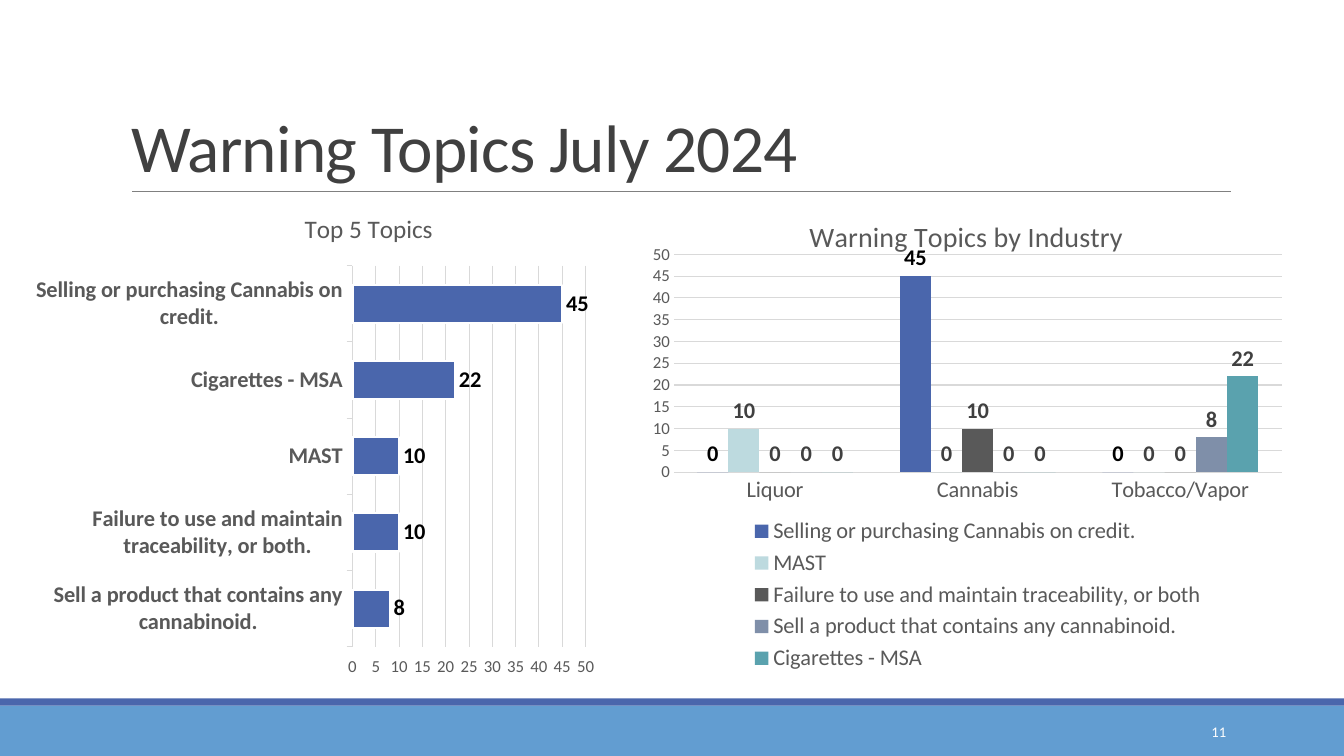
"""Build the July 2024 warning topics slide with two bar charts."""
from lxml import etree
from pptx import Presentation
from pptx.chart import data as chart_data
from pptx.dml.color import RGBColor
from pptx.enum import chart as ch, shapes, text
from pptx.oxml import ns
from pptx.util import Inches, Pt

COLORS = {
    "blue": "4A66AC", "sky": "629DD1", "pale": "BDDADF", "gray": "595959",
    "slate": "7F8FA9", "teal": "5AA2AE", "dark": "404040", "rule": "808080",
    "grid": "D9D9D9", "black": "000000", "white": "FFFFFF",
}
TICK = ch.XL_TICK_MARK


def style(font, size, color, bold=False):
    font.name, font.size, font.bold = "Calibri", Pt(size), bold
    font.color.rgb = RGBColor.from_string(COLORS[color])


def place(part, index, **fractions):
    for old in part.findall(ns.qn("c:layout")):
        part.remove(old)
    layout = etree.Element(ns.qn("c:layout"))
    part.insert(index, layout)
    manual = etree.SubElement(layout, ns.qn("c:manualLayout"))
    if part.tag == ns.qn("c:plotArea"):
        etree.SubElement(manual, ns.qn("c:layoutTarget"), val="inner")
    for key in ("xMode", "yMode"):
        etree.SubElement(manual, ns.qn(f"c:{key}"), val="edge")
    for key, value in fractions.items():
        etree.SubElement(manual, ns.qn(f"c:{key}"), val=str(value))


prs = Presentation()
prs.slide_width, prs.slide_height = Inches(13.33), Inches(7.5)
slide = prs.slides.add_slide(prs.slide_layouts[5])

for top, height, color in ((7, 0.5, "sky"), (6.93, 0.07, "blue")):
    band = slide.shapes.add_shape(shapes.MSO_SHAPE.RECTANGLE, 0, Inches(top),
                                  prs.slide_width, Inches(height))
    band.shadow.inherit = False
    band.fill.solid()
    band.fill.fore_color.rgb = RGBColor.from_string(COLORS[color])
    band.line.fill.background()

rule = slide.shapes.add_connector(shapes.MSO_CONNECTOR.STRAIGHT, Inches(1.31),
                                  Inches(1.9), Inches(12.21), Inches(1.9))
rule.line.color.rgb = RGBColor.from_string(COLORS["rule"])
rule.line.width = Pt(0.5)
etree.SubElement(rule._element.spPr, ns.qn("a:effectLst"))

heading = slide.shapes.title
heading.left, heading.top = Inches(1.2), Inches(0.31)
heading.width, heading.height = Inches(11), Inches(1.59)
heading.text_frame.text = "Warning Topics July 2024"
heading.text_frame.auto_size = text.MSO_AUTO_SIZE.NONE
heading.text_frame.vertical_anchor = text.MSO_ANCHOR.BOTTOM
headline = heading.text_frame.paragraphs[0]
headline.alignment = text.PP_ALIGN.LEFT
headline.line_spacing = 0.85
style(headline.font, 48, "dark")
headline.runs[0].font._element.set("spc", "-50")

TOP_TOPICS = {
    "Sell a product that contains any cannabinoid.": 8,
    "Failure to use and maintain traceability, or both.": 10,
    "MAST": 10,
    "Cigarettes - MSA": 22,
    "Selling or purchasing Cannabis on credit.": 45,
}
INDUSTRY_TOPICS = [
    ("Selling or purchasing Cannabis on credit.", (0, 45, 0), "blue", "black"),
    ("MAST", (10, 0, 0), "pale", "dark"),
    ("Failure to use and maintain traceability, or both", (0, 10, 0), "gray", "dark"),
    ("Sell a product that contains any cannabinoid.", (0, 0, 8), "slate", "dark"),
    ("Cigarettes - MSA", (0, 0, 22), "teal", "dark"),
]
CHARTS = [
    dict(title="Top 5 Topics", size=18, kind=ch.XL_CHART_TYPE.BAR_CLUSTERED,
         left=0.26, width=5.78, cats=list(TOP_TOPICS), gap=100, bold=True,
         tick=TICK.OUTSIDE,
         series=[("Series 1", tuple(TOP_TOPICS.values()), "blue", "black")],
         title_at=dict(x=0.47, y=0.03),
         plot_at=dict(x=0.56, y=0.15, w=0.4, h=0.77)),
    dict(title="Warning Topics by Industry", size=20,
         kind=ch.XL_CHART_TYPE.COLUMN_CLUSTERED,
         left=6.26, width=6.61, cats=["Liquor", "Cannabis", "Tobacco/Vapor"],
         gap=150, bold=False, tick=TICK.NONE, series=INDUSTRY_TOPICS,
         title_at=dict(x=0.26, y=0.04),
         plot_at=dict(x=0.064, y=0.127, w=0.912, h=0.44)),
]

for item in CHARTS:
    numbers = chart_data.CategoryChartData()
    numbers.categories = item["cats"]
    for name, values, _, _ in item["series"]:
        numbers.add_series(name, values)
    chart = slide.shapes.add_chart(item["kind"], Inches(item["left"]), Inches(1.9),
                                   Inches(item["width"]), Inches(4.91), numbers).chart
    style(chart.font, 10, "black")

    chart.has_title = True
    caption = chart.chart_title.text_frame
    caption.text = item["title"]
    style(caption.paragraphs[0].font, item["size"], "gray")
    place(chart.chart_title._element, 1, **item["title_at"])
    place(chart._chartSpace.chart.plotArea, 0, **item["plot_at"])

    topics, counts = chart.category_axis, chart.value_axis
    style(topics.tick_labels.font, 16, "gray", item["bold"])
    style(counts.tick_labels.font, 12, "gray")
    topics.has_major_gridlines = False
    counts.minimum_scale, counts.maximum_scale, counts.major_unit = 0, 50, 5
    grid = counts.major_gridlines.format.line
    grid.color.rgb = RGBColor.from_string(COLORS["grid"])
    grid.width = Pt(0.75)
    counts.format.line.fill.background()
    for axis in (topics, counts):
        axis.major_tick_mark, axis.minor_tick_mark = item["tick"], TICK.NONE

    bars = chart.plots[0]
    bars.gap_width, bars.overlap, bars.vary_by_categories = item["gap"], 0, False
    for series, (_, _, color, label_color) in zip(bars.series, item["series"]):
        series.format.fill.solid()
        series.format.fill.fore_color.rgb = RGBColor.from_string(COLORS[color])
        series.invert_if_negative = False
        labels = series.data_labels
        labels.show_value = True
        labels.position = ch.XL_LABEL_POSITION.OUTSIDE_END
        style(labels.font, 16, label_color, True)

    if len(item["series"]) == 1:
        topics.format.line.color.rgb = RGBColor.from_string(COLORS["grid"])
        topics.format.line.width = Pt(0.75)
        outline = bars.series[0].format.line
        outline.color.rgb = RGBColor.from_string(COLORS["white"])
        outline.width = Pt(1.5)
        chart.has_legend = False
    else:
        topics.format.line.fill.background()
        chart.has_legend = True
        chart.legend.position = ch.XL_LEGEND_POSITION.BOTTOM
        chart.legend.include_in_layout = False
        style(chart.legend.font, 16, "gray")
        place(chart.legend._element, 1, x=0.17, y=0.65, w=0.7, h=0.33)

page = slide.shapes.add_textbox(Inches(10.83), Inches(7.06), Inches(1.43), Inches(0.4))
page.text_frame.word_wrap = True
page.text_frame.vertical_anchor = text.MSO_ANCHOR.MIDDLE
page.text_frame.text = "11"
page_number = page.text_frame.paragraphs[0]
page_number.alignment = text.PP_ALIGN.RIGHT
style(page_number.font, 10.5, "white")

prs.save("out.pptx")
